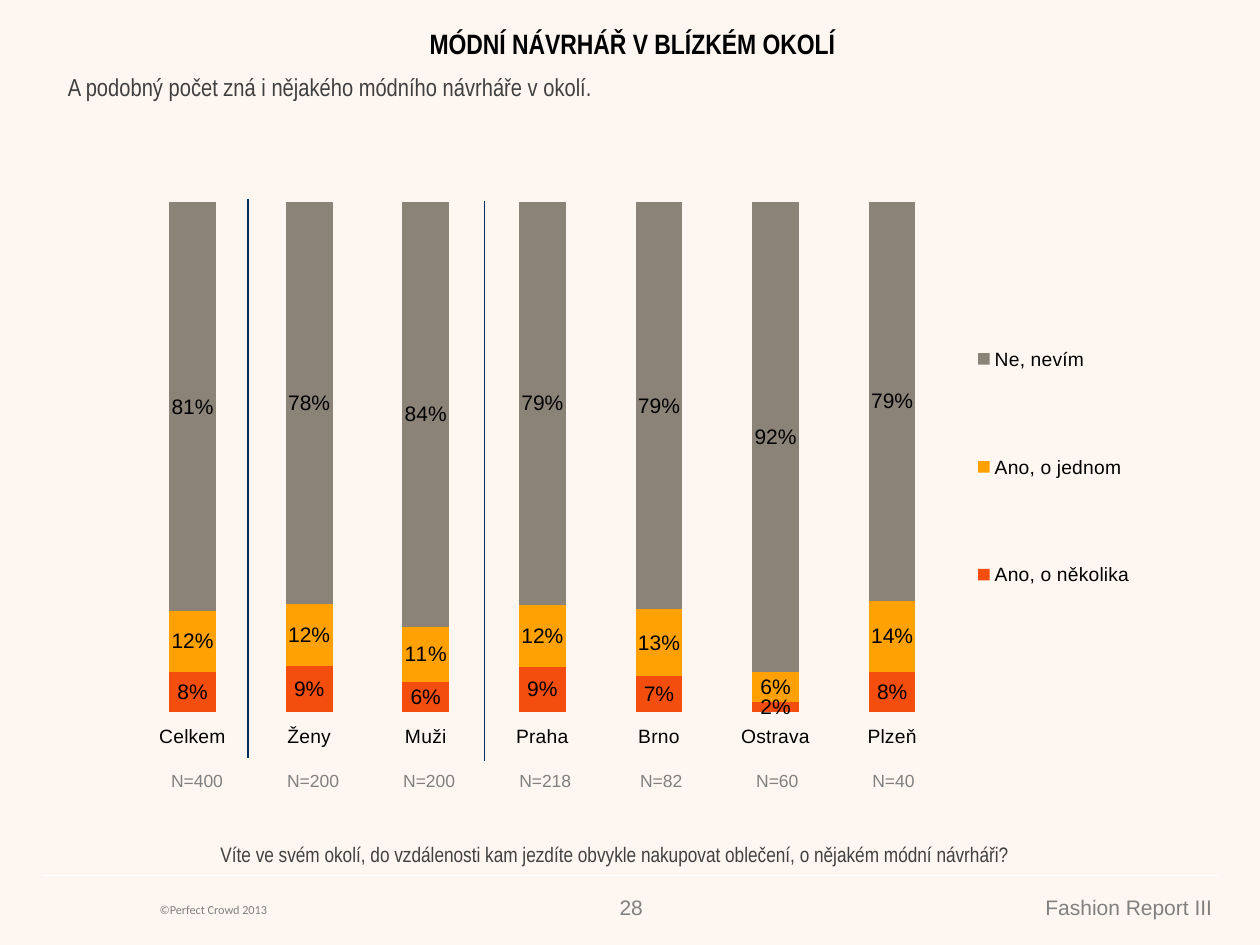
from lxml.etree import SubElement
from pptx import Presentation
from pptx.chart.data import CategoryChartData
from pptx.dml.color import RGBColor
from pptx.enum.chart import XL_CHART_TYPE as ChartType, XL_LABEL_POSITION as LabelPosition
from pptx.enum.chart import XL_LEGEND_POSITION as LegendPosition, XL_TICK_LABEL_POSITION as TickLabels
from pptx.enum.shapes import MSO_CONNECTOR as Connector
from pptx.enum.text import MSO_ANCHOR as Anchor, PP_ALIGN as Align
from pptx.oxml.ns import qn
from pptx.util import Cm, Pt

CREAM = RGBColor(0xFE, 0xF6, 0xF0)
WHITE = RGBColor(0xFF, 0xFF, 0xFF)
BLACK = RGBColor(0, 0, 0)
DARK = RGBColor(0x40, 0x40, 0x40)
GRAY = RGBColor(0x80, 0x80, 0x80)
NAVY = RGBColor(0x00, 0x2F, 0x5E)
RED = RGBColor(0xF3, 0x4E, 0x0D)
ORANGE = RGBColor(0xFF, 0xA1, 0x02)
TAUPE = RGBColor(0x8B, 0x82, 0x78)
NO_STYLE = "{2D5ABB26-0587-4C30-8999-92F81FD0307C}"


def write(frame, text, font="Arial", size=12, color=GRAY, bold=False, align=Align.LEFT):
    frame.word_wrap = True
    para = frame.paragraphs[0]
    para.alignment = align
    span = para.add_run()
    span.text = text
    span.font.name = font
    span.font.size = Pt(size)
    span.font.bold = bold
    span.font.color.rgb = color


def set_layout(parent, index, inner, **fractions):
    for old in parent.findall(qn("c:layout")):
        parent.remove(old)
    layout = SubElement(parent, qn("c:layout"))
    parent.insert(index, layout)
    manual = SubElement(layout, qn("c:manualLayout"))
    if inner:
        SubElement(manual, qn("c:layoutTarget")).set("val", "inner")
    for mode in ("xMode", "yMode"):
        SubElement(manual, qn("c:" + mode)).set("val", "edge")
    for side, fraction in fractions.items():
        SubElement(manual, qn("c:" + side)).set("val", str(fraction))


deck = Presentation()
deck.slide_width, deck.slide_height = Cm(25.4), Cm(19.05)
page = deck.slides.add_slide(deck.slide_layouts[6])
page.background.fill.solid()
page.background.fill.fore_color.rgb = CREAM

data = CategoryChartData(number_format="0")
data.categories = ["Celkem", "Ženy", "Muži", "Praha", "Brno", "Ostrava", "Plzeň"]
data.add_series("Ano, o několika", [8, 9, 6, 9, 7, 2, 8])
data.add_series("Ano, o jednom", [12, 12, 11, 12, 13, 6, 14])
data.add_series("Ne, nevím", [81, 78, 84, 79, 79, 92, 79])
chart = page.shapes.add_chart(ChartType.COLUMN_STACKED_100, Cm(2.29), Cm(3.38),
                              Cm(20.83), Cm(12.7), data).chart
chart.has_title = False
chart.font.name = "Arial"
chart.font.size = Pt(12)
chart.font.color.rgb = BLACK

chart.value_axis.visible = False
chart.value_axis.has_major_gridlines = False
chart.category_axis.tick_label_position = TickLabels.LOW
chart.category_axis.tick_labels.font.size = Pt(11)
chart.category_axis.format.line.fill.background()

chart.has_legend = True
chart.legend.position = LegendPosition.RIGHT
chart.legend.include_in_layout = False
chart.legend.font.size = Pt(11)

plot = chart.plots[0]
plot.gap_width = 150
plot.overlap = 100
plot.vary_by_categories = False
for series, color in zip(plot.series, (RED, ORANGE, TAUPE)):
    series.format.fill.solid()
    series.format.fill.fore_color.rgb = color
    labels = series.data_labels
    labels.show_value = True
    labels.position = LabelPosition.CENTER
    labels.number_format = '#,##0"%"'
    labels.number_format_is_linked = False
    labels.font.size = Pt(12)
    labels.font.color.rgb = BLACK

chart_root = chart.element
set_layout(chart_root.find(".//" + qn("c:plotArea")), 0, True, x=0.02, y=0.055, w=0.79, h=0.81)
set_layout(chart_root.find(".//" + qn("c:legend")), 1, False, x=0.82, y=0.15, w=0.18, h=0.65)

for x1, y1, x2, y2, color in (
    (0.85, 17.65, 24.55, 17.65, WHITE),
    (5, 4.01, 5, 15.29, NAVY),
    (9.76, 4.06, 9.76, 15.34, NAVY),
):
    line = page.shapes.add_connector(Connector.STRAIGHT, Cm(x1), Cm(y1), Cm(x2), Cm(y2))
    line.line.color.rgb = color
    line.line.width = Pt(0.75)
    SubElement(line.element.spPr, qn("a:effectLst"))

counts = [400, 200, 200, 218, 82, 60, 40]
holder = page.shapes.add_table(1, len(counts), Cm(2.8), Cm(15.47), Cm(2.34 * len(counts)), Cm(0.53))
table = holder.table
table.first_row = table.horz_banding = False
holder.element.find(".//" + qn("a:tableStyleId")).text = NO_STYLE
for column, cell, count in zip(table.columns, table.rows[0].cells, counts):
    column.width = Cm(2.34)
    cell.fill.background()
    cell.vertical_anchor = Anchor.MIDDLE
    cell.margin_left = cell.margin_right = cell.margin_top = Cm(0.02)
    cell.margin_bottom = 0
    write(cell.text_frame, f"N={count}", size=10, align=Align.CENTER)

narrow = {"font": "Arial Narrow", "color": DARK}
for left, top, width, height, text, style in (
    (1.42, 0.41, 22.66, 0.94, "MÓDNÍ NÁVRHÁŘ V BLÍZKÉM OKOLÍ",
     {"font": "Arial Narrow", "size": 16, "color": BLACK, "bold": True, "align": Align.CENTER}),
    (1.12, 1.33, 23.77, 2, "A podobný počet zná i nějakého módního návrháře v okolí.",
     {**narrow, "size": 14}),
    (0.89, 16.84, 23.01, 0.76,
     "Víte ve svém okolí, do vzdálenosti kam jezdíte obvykle nakupovat oblečení, "
     "o nějakém módní návrháři?", {**narrow, "align": Align.CENTER}),
    (2.97, 18.06, 7.39, 0.56, "©Perfect Crowd 2013", {"font": "Calibri", "size": 7}),
    (12.17, 17.91, 1.04, 0.76, "28", {"align": Align.RIGHT}),
    (15.27, 17.91, 9.42, 0.76, "Fashion Report III", {"align": Align.RIGHT}),
):
    box = page.shapes.add_textbox(Cm(left), Cm(top), Cm(width), Cm(height))
    write(box.text_frame, text, **style)

deck.save("out.pptx")
